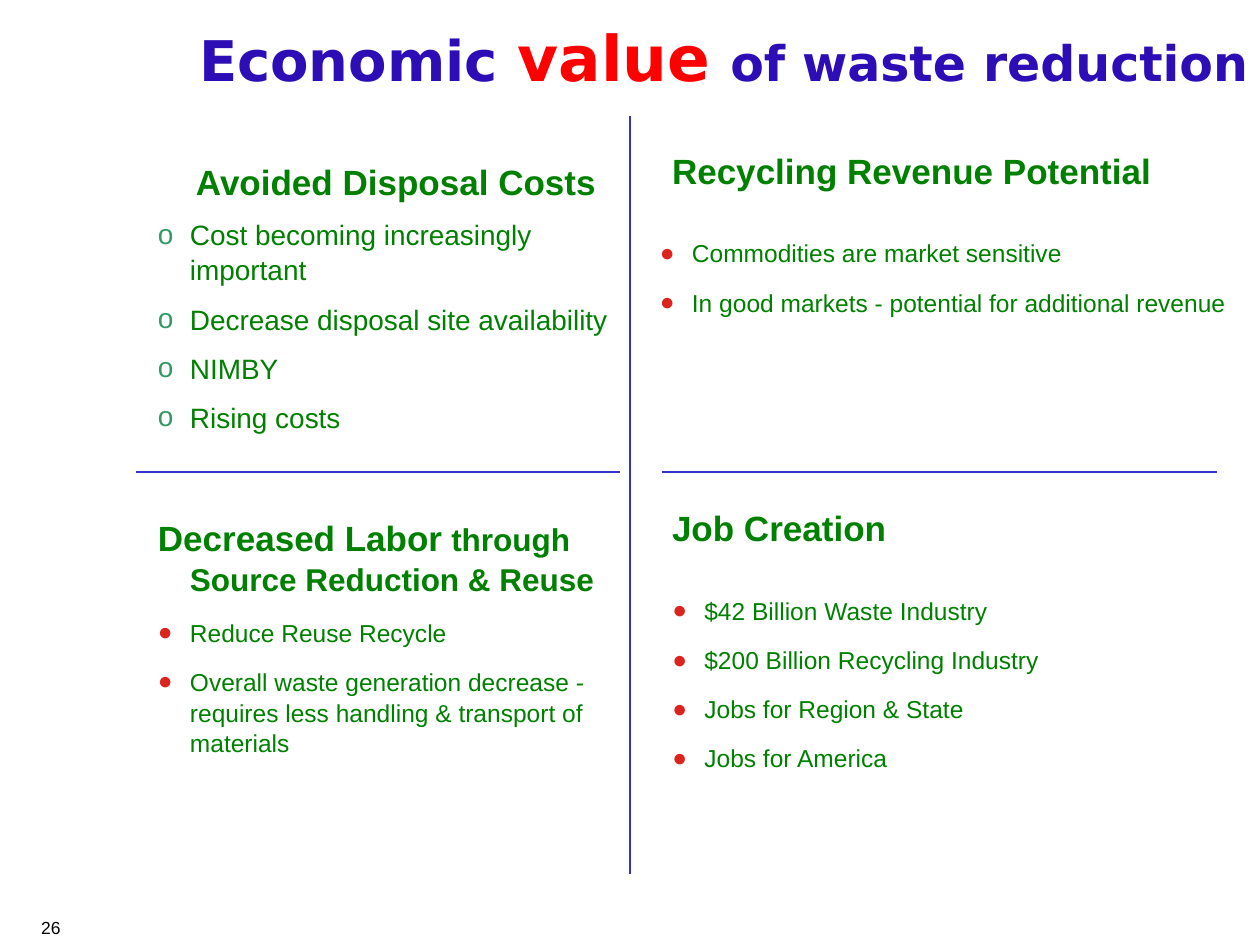
from dataclasses import dataclass

from lxml import etree
from pptx import Presentation, util as u
from pptx.dml.color import RGBColor
from pptx.enum import shapes, text
from pptx.oxml import ns

SCALE = 914400 / 126  # EMU in one px
HUE = {
    "title": "2D0DB5", "accent": "FF0000", "body": "008000", "rule": "3333CC",
    "ring": "339966", "dot": "DC241F", "page": "000000",
}
HANG = 32


@dataclass
class Run:
    text: str
    size: int
    bold: bool = False
    hue: str = "body"
    font: str = "Arial"


@dataclass
class Para:
    runs: list[Run]
    mark: str = ""
    tint: str = "dot"
    left: int = HANG
    first: int = -HANG


@dataclass
class Block:
    box: tuple[int, int, int, int]
    paras: list[Para]
    gap: float = 10.5
    inset: bool = False


@dataclass
class Rule:
    x1: int
    y1: int
    x2: int
    y2: int


def px(n: int) -> u.Emu:
    return u.Emu(round(n * SCALE))


def place(shape, box: tuple[int, int, int, int]) -> None:
    shape.left, shape.top, shape.width, shape.height = map(px, box)


def add_mark(para, mark: str, tint: str) -> None:
    props = para._p.get_or_add_pPr()

    def add(parent, tag: str, **attrs: str):
        return etree.SubElement(parent, ns.qn(f"a:{tag}"), attrs)

    if not mark:
        add(props, "buNone")
        return
    add(add(props, "buClr"), "srgbClr", val=HUE[tint])
    add(props, "buFont", typeface="Arial")
    add(props, "buChar", char=mark)


def write(shape, paras: list[Para], *, gap: float = 0, lead: float = 1.05,
          inset: bool = False, align=text.PP_ALIGN.LEFT,
          anchor=text.MSO_ANCHOR.TOP) -> None:
    frame = shape.text_frame
    frame.word_wrap = True
    frame.auto_size = text.MSO_AUTO_SIZE.NONE
    frame.vertical_anchor = anchor
    if not inset:
        frame.margin_left = frame.margin_right = 0
        frame.margin_top = frame.margin_bottom = 0
    for i, item in enumerate(paras):
        para = frame.add_paragraph() if i else frame.paragraphs[0]
        add_mark(para, item.mark, item.tint)
        props = para._p.get_or_add_pPr()
        props.set("marL", str(px(item.left)))
        props.set("indent", str(px(item.first)))
        para.alignment = align
        para.line_spacing = lead
        para.space_before = u.Pt(gap if i else 0)
        para.space_after = u.Pt(0)
        for part in item.runs:
            run = para.add_run()
            run.text = part.text
            run.font.name = part.font
            run.font.size = u.Pt(part.size)
            run.font.bold = part.bold
            run.font.color.rgb = RGBColor.from_string(HUE[part.hue])


def draw_block(slide, block: Block, holder=None) -> None:
    shape = holder or slide.shapes.add_textbox(0, 0, 0, 0)
    place(shape, block.box)
    write(shape, block.paras, gap=block.gap, inset=block.inset)


def draw_rule(slide, rule: Rule) -> None:
    line = slide.shapes.add_connector(
        shapes.MSO_CONNECTOR.STRAIGHT,
        px(rule.x1), px(rule.y1), px(rule.x2), px(rule.y2))
    line.line.color.rgb = RGBColor.from_string(HUE["rule"])
    line.line.width = u.Pt(1)
    etree.SubElement(line._element.spPr, ns.qn("a:effectLst"))


def head(words: str, **form) -> Para:
    return Para([Run(words, 20, True)], **form)


def items(*lines: str, size: int = 14, mark: str = "●",
          tint: str = "dot") -> list[Para]:
    return [Para([Run(line, size)], mark, tint) for line in lines]


def title_run(words: str, size: int, hue: str = "title") -> Run:
    return Run(words, size, True, hue, "DejaVu Sans")


TITLE = [
    title_run("Economic ", 32),
    title_run("value", 36, "accent"),
    title_run(" ", 32),
    title_run("of waste reduction", 28),
]

COSTS = Block(
    (158, 158, 462, 292),
    [head("Avoided Disposal Costs", left=38, first=0)]
    + items("Cost becoming increasingly important",
            "Decrease disposal site availability",
            "NIMBY", "Rising costs", size=16, mark="o", tint="ring"),
    gap=8)

BLOCKS = [
    Block((158, 514, 469, 378),
          [Para([Run("Decreased Labor", 20, True),
                 Run(" through Source Reduction & Reuse", 18, True)])]
          + items("Reduce Reuse Recycle",
                  "Overall waste generation decrease - requires less "
                  "handling & transport of materials")),
    Block((672, 504, 588, 349), [head("Job Creation")]),
    Block((672, 147, 558, 302), [head("Recycling Revenue Potential")]),
    Block((660, 237, 582, 213),
          items("Commodities are market sensitive",
                "In good markets - potential for additional revenue")),
    Block((660, 588, 630, 197),
          items("$42 Billion Waste Industry",
                "$200 Billion Recycling Industry",
                "Jobs for Region & State", "Jobs for America"),
          inset=True),
]

RULES = [
    Rule(630, 116, 630, 874),
    Rule(136, 472, 620, 472),
    Rule(662, 472, 1217, 472),
]


def main() -> None:
    deck = Presentation()
    deck.slide_width, deck.slide_height = px(1260), px(945)
    slide = deck.slides.add_slide(deck.slide_layouts[1])

    # Title
    title = slide.shapes.title
    place(title, (199, -53, 1124, 147))
    write(title, [Para(TITLE, left=0, first=0)], lead=1,
          anchor=text.MSO_ANCHOR.BOTTOM)

    # Quadrants and the lines between them
    draw_block(slide, COSTS, slide.placeholders[1])
    for rule in RULES:
        draw_rule(slide, rule)
    for block in BLOCKS:
        draw_block(slide, block)

    # Page number
    page = slide.shapes.add_textbox(0, px(911), px(73), px(34))
    write(page, [Para([Run("26", 10, hue="page")], left=0, first=0)],
          lead=1, inset=True, align=text.PP_ALIGN.RIGHT)

    deck.save("out.pptx")


if __name__ == "__main__":
    main()
